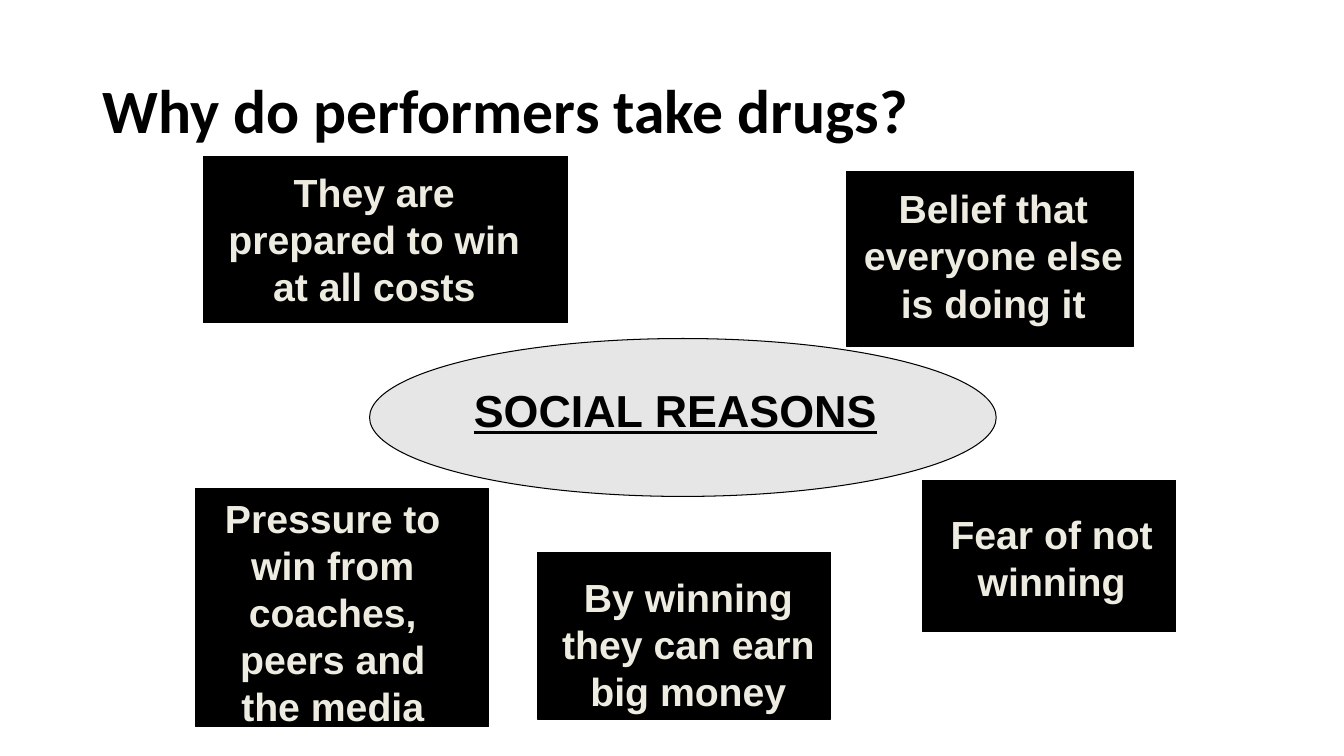
from pptx import Presentation, util as u
from pptx.dml.color import RGBColor
from pptx.enum import shapes, text as t

BLACK = RGBColor(0x00, 0x00, 0x00)
CREAM = RGBColor(0xEE, 0xEC, 0xE1)
GREY = RGBColor(0xE7, 0xE6, 0xE6)

REASONS = [
    ("They are prepared to win at all costs",
     (24.2, 18.6, 43.4, 19.8), (24.2, 19.4, 40.7, 18)),
    ("Pressure to win from coaches, peers and the media",
     (23.3, 58.2, 34.9, 28.3), (23.3, 58.2, 32.6, 29.3)),
    ("By winning they can earn big money",
     (64, 65.8, 34.9, 19.8), (64.9, 67.7, 34.1, 18)),
    ("Belief that everyone else is doing it",
     (100.8, 20.4, 34.1, 20.8), (100.8, 21.4, 34.9, 18)),
    ("Fear of not winning",
     (109.8, 57.2, 30.2, 18), (110.3, 60.1, 29.8, 12.4)),
]


def write(frame, content, size, color=BLACK, font="Arial", underline=None,
          align=t.PP_ALIGN.CENTER, anchor=t.MSO_ANCHOR.TOP, line_spacing=None):
    frame.word_wrap = True
    frame.vertical_anchor = anchor
    paragraph = frame.paragraphs[0]
    paragraph.alignment = align
    paragraph.line_spacing = line_spacing
    run = paragraph.add_run()
    run.text = content
    run.font.name = font
    run.font.size = u.Pt(size)
    run.font.bold = True
    run.font.underline = underline
    run.font.color.rgb = color


class ReasonsSlide:
    columns, rows = 160, 90

    def __init__(self, presentation):
        self.column = presentation.slide_width / self.columns
        self.row = presentation.slide_height / self.rows
        self.slide = presentation.slides.add_slide(presentation.slide_layouts[5])

    def place(self, box):
        left, top, width, height = box
        return [round(length) for length in (
            left * self.column, top * self.row,
            width * self.column, height * self.row)]

    def title(self, content, box):
        title = self.slide.shapes.title
        title.left, title.top, title.width, title.height = self.place(box)
        write(title.text_frame, content, 44, font="Calibri", line_spacing=0.9,
              align=t.PP_ALIGN.LEFT, anchor=t.MSO_ANCHOR.MIDDLE)

    def panel(self, kind, box, fill):
        shape = self.slide.shapes.add_shape(kind, *self.place(box))
        shape.shadow.inherit = False
        shape.fill.solid()
        shape.fill.fore_color.rgb = fill
        shape.line.color.rgb = BLACK
        shape.line.width = u.Pt(0.75)

    def label(self, content, box, size, **style):
        shape = self.slide.shapes.add_textbox(*self.place(box))
        write(shape.text_frame, content, size, **style)

    def reason(self, content, panel_box, label_box):
        self.panel(shapes.MSO_SHAPE.RECTANGLE, panel_box, BLACK)
        self.label(content, label_box, 28, color=CREAM)


def main():
    presentation = Presentation()
    presentation.slide_width = u.Inches(13.33)
    presentation.slide_height = u.Inches(7.5)
    slide = ReasonsSlide(presentation)
    slide.title("Why do performers take drugs?", (11, 4.8, 138, 17.4))
    slide.panel(shapes.MSO_SHAPE.OVAL, (44, 40.3, 74.6, 18.8), GREY)
    slide.label("SOCIAL REASONS", (51.6, 45, 57.6, 7.6), 32, underline=True)
    for reason in REASONS:
        slide.reason(*reason)
    presentation.save("out.pptx")


if __name__ == "__main__":
    main()
